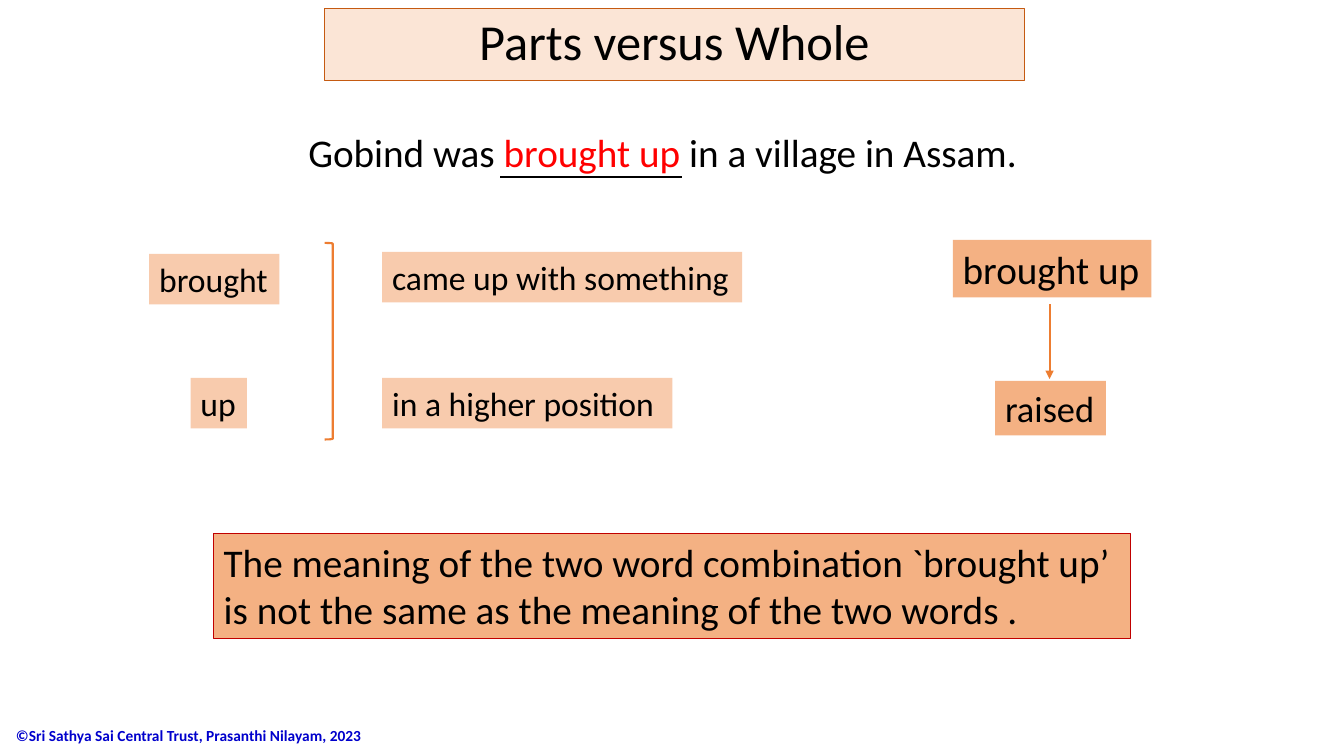
from lxml.etree import SubElement
from pptx import Presentation
from pptx.dml.color import RGBColor
from pptx.enum.shapes import MSO_CONNECTOR as Connector, MSO_SHAPE as Shape
from pptx.enum.text import MSO_ANCHOR as Anchor, PP_ALIGN as Align
from pptx.oxml.ns import qn
from pptx.util import Inches, Pt

BLACK, RED, BLUE, ORANGE = "000000", "FF0000", "0000CC", "ED7D31"
TITLE_FILL, TITLE_LINE = "FBE5D6", "C55A11"
PART_FILL, WHOLE_FILL, CONCLUSION_LINE = "F8CBAD", "F4B183", "C00000"


def rgb(hex_color):
    return RGBColor.from_string(hex_color)


def write(shape, paragraphs, size, color=BLACK, bold=False, align=Align.LEFT,
          wrap=False, spacing=None, font="Calibri"):
    """Fill a shape with paragraphs, each a list of strings or (string, colour) runs."""
    frame = shape.text_frame
    frame.word_wrap = wrap
    frame.vertical_anchor = Anchor.MIDDLE
    for index, runs in enumerate(paragraphs):
        paragraph = frame.add_paragraph() if index else frame.paragraphs[0]
        paragraph.alignment = align
        if spacing:
            paragraph.line_spacing = spacing
        for part in runs:
            text, run_color = (part, color) if isinstance(part, str) else part
            run = paragraph.add_run()
            run.text = text
            run.font.name, run.font.size, run.font.bold = font, Pt(size), bold
            run.font.color.rgb = rgb(run_color)


class LessonSlide:
    """Holds the slide and draws its elements in the lesson's style."""

    def __init__(self, slide):
        self.slide = slide

    def paint(self, shape, fill=None, line=None, width=0.75):
        if fill:
            shape.fill.solid()
            shape.fill.fore_color.rgb = rgb(fill)
        else:
            shape.fill.background()
        if line:
            shape.line.color.rgb = rgb(line)
            shape.line.width = Pt(width)
        else:
            shape.line.fill.background()

    def title(self, text, left, top, width, height):
        title = self.slide.shapes.title
        title.left, title.top = Inches(left), Inches(top)
        title.width, title.height = Inches(width), Inches(height)
        self.paint(title, TITLE_FILL, TITLE_LINE)
        write(title, [[text]], 36, align=Align.CENTER, wrap=True, spacing=0.9)

    def text(self, paragraphs, left, top, width, height, size, **style):
        box = self.slide.shapes.add_textbox(
            Inches(left), Inches(top), Inches(width), Inches(height))
        write(box, paragraphs, size, **style)

    def box(self, paragraphs, left, top, width, height, size, fill, line=None, **style):
        box = self.slide.shapes.add_shape(
            Shape.RECTANGLE, Inches(left), Inches(top), Inches(width), Inches(height))
        box.shadow.inherit = False
        self.paint(box, fill, line)
        write(box, paragraphs, size, **style)

    def bracket(self, left, top, width, height):
        bracket = self.slide.shapes.add_shape(
            Shape.RIGHT_BRACKET, Inches(left), Inches(top), Inches(width), Inches(height))
        bracket.shadow.inherit = False
        self.paint(bracket, line=ORANGE, width=1.5)

    def line(self, x1, y1, x2, y2, color, arrow=False):
        line = self.slide.shapes.add_connector(
            Connector.STRAIGHT, Inches(x1), Inches(y1), Inches(x2), Inches(y2))
        line.line.color.rgb = rgb(color)
        line.line.width = Pt(1.5)
        if arrow:
            SubElement(line.line._get_or_add_ln(), qn("a:tailEnd"), type="triangle")
        SubElement(line._element.spPr, qn("a:effectLst"))


def main():
    deck = Presentation()
    deck.slide_width, deck.slide_height = Inches(13.33), Inches(7.5)
    lesson = LessonSlide(deck.slides.add_slide(deck.slide_layouts[5]))

    lesson.title("Parts versus Whole", 3.22, 0.08, 6.94, 0.72)
    lesson.text([["Gobind was ", ("brought up ", RED), "in a village in Assam."]],
                2.96, 1.22, 7.4, 0.57, 28, wrap=True)
    lesson.line(4.96, 1.76, 6.76, 1.76, BLACK)

    parts = [
        ("brought", 1.48, 2.52, 1.29, False),
        ("up", 1.89, 3.75, 0.56, False),
        ("came up with something", 3.79, 2.5, 3.57, False),
        ("in a higher position", 3.79, 3.75, 2.88, True),
    ]
    for words, left, top, width, wrap in parts:
        lesson.box([[words]], left, top, width, 0.5, 24, PART_FILL, wrap=wrap)
    lesson.bracket(3.22, 2.41, 0.08, 1.95)

    lesson.box([["brought up"]], 9.45, 2.38, 1.97, 0.57, 28, WHOLE_FILL)
    lesson.line(10.41, 3.02, 10.41, 3.76, ORANGE, arrow=True)
    lesson.box([["raised"]], 9.87, 3.78, 1.1, 0.54, 26, WHOLE_FILL)

    conclusion = [["The meaning of the two word combination `brought up’"],
                  ["is not the same as the meaning of the two words ."]]
    lesson.box(conclusion, 2.12, 5.29, 9.09, 1.04, 28, WHOLE_FILL, CONCLUSION_LINE,
               align=Align.JUSTIFY, wrap=True)
    lesson.text([["©Sri Sathya Sai Central Trust, Prasanthi Nilayam, 2023"]],
                0.06, 7.09, 3.81, 0.41, 11, color=BLUE, bold=True, wrap=True)

    deck.save("out.pptx")


if __name__ == "__main__":
    main()
